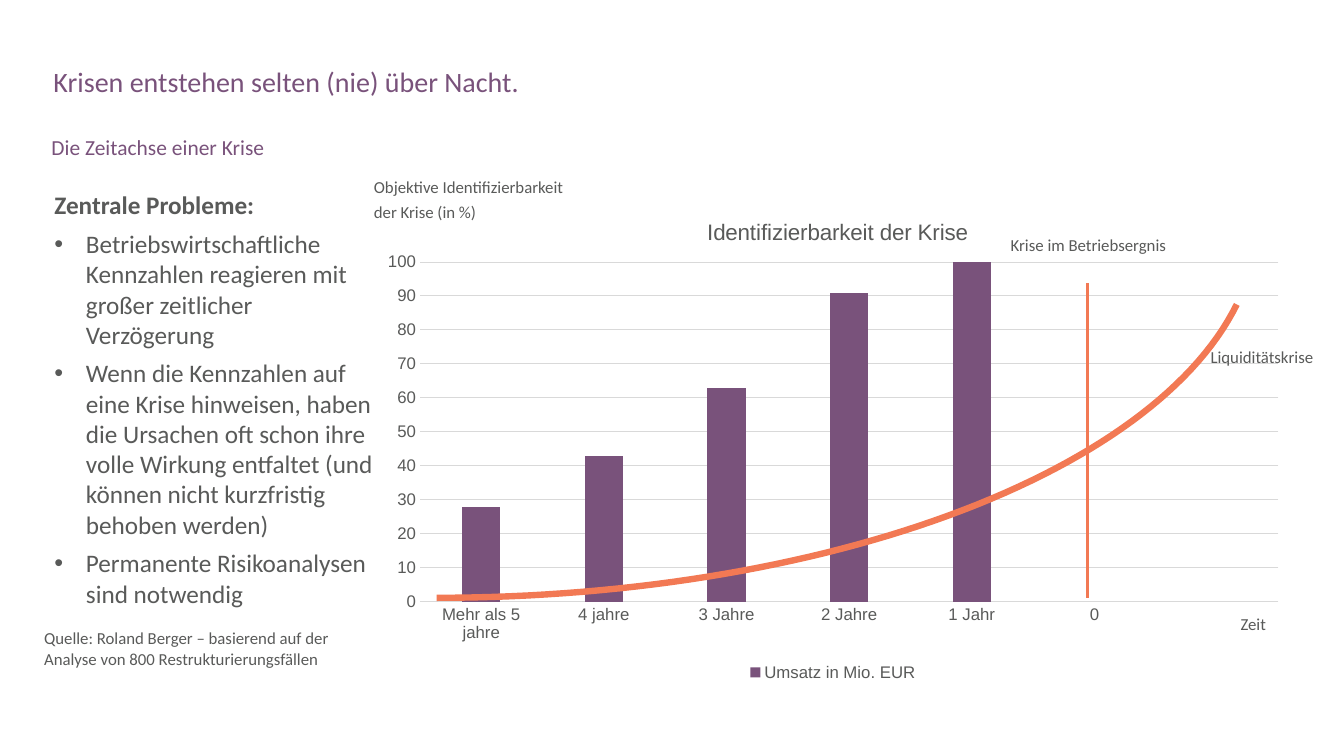
import math

from lxml import etree
from pptx import Presentation, util as u
from pptx.chart.data import CategoryChartData
from pptx.dml.color import RGBColor
from pptx.enum import chart as ch, shapes, text
from pptx.oxml import ns

Pt = u.Pt
COLORS = {"plum": "79527B", "gray": "595A59", "orange": "F27954", "grid": "D9D9D9"}
ALIGN = text.PP_ALIGN


def color(name):
    return RGBColor.from_string(COLORS[name])


def sub(parent, tag, **attributes):
    return etree.SubElement(parent, ns.qn(tag), **attributes)


def place(shape, left, top, width, height):
    shape.left, shape.top, shape.width, shape.height = map(Pt, (left, top, width, height))


def set_bullet(paragraph, bullet):
    properties = paragraph._p.get_or_add_pPr()
    indent = Pt(22.5) if bullet else 0
    properties.set("marL", str(indent))
    properties.set("indent", str(-indent))
    if bullet:
        sub(sub(properties, "a:buClr"), "a:srgbClr", val=COLORS["gray"])
        sub(properties, "a:buFont", typeface="Arial")
        sub(properties, "a:buChar", char="•")
    else:
        sub(properties, "a:buNone")


def write(shape, lines, size=12, tint="gray", align=ALIGN.LEFT, spacing=1.0,
          anchor=text.MSO_ANCHOR.TOP, inset=(6.5, 3), heading=False):
    frame = shape.text_frame
    frame.word_wrap = True
    frame.auto_size = text.MSO_AUTO_SIZE.NONE
    frame.vertical_anchor = anchor
    frame.margin_left = frame.margin_right = Pt(inset[0])
    frame.margin_top = frame.margin_bottom = Pt(inset[1])
    for index, line in enumerate(lines):
        paragraph = frame.add_paragraph() if index else frame.paragraphs[0]
        paragraph.text = line
        paragraph.alignment = align
        paragraph.line_spacing = spacing
        paragraph.space_before = Pt(6 if heading and index else 0)
        paragraph.space_after = Pt(0)
        set_bullet(paragraph, heading and index > 0)
        font = paragraph.font
        font.size, font.name = Pt(size), "Calibri"
        font.bold = heading and index == 0
        font.color.rgb = color(tint)


def add_label(slide, box, lines, **style):
    write(slide.shapes.add_textbox(*map(Pt, box)), lines, **style)


def set_font(font, size):
    font.size, font.name, font.bold = Pt(size), "Arial", False
    font.color.rgb = color("gray")


def set_layout(parent, position, **measures):
    for old in parent.findall(ns.qn("c:layout")):
        parent.remove(old)
    layout = etree.Element(ns.qn("c:layout"))
    manual = sub(layout, "c:manualLayout")
    if "w" in measures:
        sub(manual, "c:layoutTarget", val="inner")
    for edge in ("xMode", "yMode"):
        sub(manual, f"c:{edge}", val="edge")
    for name, value in measures.items():
        sub(manual, f"c:{name}", val=str(value))
    parent.insert(position, layout)


def add_crisis_chart(slide):
    data = CategoryChartData()
    data.categories = ["Mehr als 5 jahre", "4 jahre", "3 Jahre", "2 Jahre", "1 Jahr", "0", ""]
    data.add_series("Umsatz in Mio. EUR", (28, 43, 63, 91, 100, None, None))
    chart = slide.shapes.add_chart(ch.XL_CHART_TYPE.COLUMN_CLUSTERED, Pt(263.5), Pt(139),
                                   Pt(663), Pt(350.6), data).chart
    set_font(chart.font, 12)
    title = chart.chart_title
    title.text_frame.text = "Identifizierbarkeit der Krise"
    set_font(title.text_frame.paragraphs[0].font, 16)
    title.include_in_layout = False
    set_layout(title._element, 1, x=0.36, y=0.04)
    set_layout(chart._chartSpace.chart.plotArea, 0, x=0.055, y=0.1375, w=0.925, h=0.692)

    chart.has_legend = True
    chart.legend.position = ch.XL_LEGEND_POSITION.BOTTOM
    chart.legend.include_in_layout = False
    set_font(chart.legend.font, 12)

    bars = chart.plots[0]
    bars.gap_width, bars.overlap, bars.vary_by_categories = 219, -27, False
    fill = bars.series[0].format.fill
    fill.solid()
    fill.fore_color.rgb = color("plum")

    years, percent = chart.category_axis, chart.value_axis
    for axis in (years, percent):
        axis.major_tick_mark = axis.minor_tick_mark = ch.XL_TICK_MARK.NONE
        set_font(axis.tick_labels.font, 12)
    percent.minimum_scale, percent.maximum_scale, percent.major_unit = 0, 100, 10
    percent.format.line.fill.background()
    percent.has_major_gridlines = True
    for line in (years.format.line, percent.major_gridlines.format.line):
        line.color.rgb = color("grid")
        line.width = Pt(0.75)


def set_line(shape, width):
    shape.line.color.rgb = color("orange")
    shape.line.width = Pt(width)


def add_liquidity_curve(slide):
    left, bottom, radius_x, radius_y, sweep, steps = 311.8, 427, 586, 268.8, 77.27, 60
    angles = [math.radians(sweep * step / steps) for step in range(1, steps + 1)]
    points = [(Pt(left + radius_x * math.sin(angle)),
               Pt(bottom - radius_y * (1 - math.cos(angle)))) for angle in angles]
    builder = slide.shapes.build_freeform(Pt(left), Pt(bottom))
    builder.add_line_segments(points, close=False)
    curve = builder.convert_to_shape()
    curve.fill.background()
    curve.shadow.inherit = False
    set_line(curve, 4.56)


def add_crisis_marker(slide):
    marker = slide.shapes.add_connector(shapes.MSO_CONNECTOR.STRAIGHT,
                                        Pt(777), Pt(427), Pt(777), Pt(202.5))
    set_line(marker, 2)
    sub(marker._element.spPr, "a:effectLst")


def main():
    deck = Presentation()
    deck.slide_width, deck.slide_height = Pt(960), Pt(540)
    slide = deck.slides.add_slide(deck.slide_layouts[3])
    headline, problems, subtitle = slide.placeholders
    wide = (7.2, 3.6)

    place(headline, 31, 45.5, 903, 46)
    write(headline, ["Krisen entstehen selten (nie) über Nacht."], size=20, tint="plum",
          spacing=0.9, inset=wide)
    place(subtitle, 29.5, 97.2, 904, 20)
    write(subtitle, ["Die Zeitachse einer Krise"], size=15.3, tint="plum",
          spacing=0.7, inset=wide)
    place(problems, 31.7, 117.4, 251.3, 335)
    write(problems, [
        "Zentrale Probleme:",
        "Betriebswirtschaftliche Kennzahlen reagieren mit großer zeitlicher Verzögerung",
        "Wenn die Kennzahlen auf eine Krise hinweisen, haben die Ursachen oft schon ihre "
        "volle Wirkung entfaltet (und können nicht kurzfristig behoben werden)",
        "Permanente Risikoanalysen sind notwendig",
    ], size=18, anchor=text.MSO_ANCHOR.MIDDLE, inset=wide, heading=True)

    add_crisis_chart(slide)
    add_label(slide, (25, 445.7, 238.3, 35.3),
              ["Quelle: Roland Berger – basierend auf der Analyse von 800 Restrukturierungsfällen"])
    add_liquidity_curve(slide)
    add_crisis_marker(slide)
    add_label(slide, (678.2, 161.3, 198.7, 24.5), ["Krise im Betriebsergnis"],
              align=ALIGN.CENTER, spacing=1.25)
    add_label(slide, (746, 241.2, 198.7, 24.5), ["Liquiditätskrise"],
              align=ALIGN.RIGHT, spacing=1.25)
    add_label(slide, (260.6, 119.5, 198.7, 62.6),
              ["Objektive Identifizierbarkeit", "der Krise (in %)"], spacing=1.25)
    add_label(slide, (871.2, 432, 39.6, 24.5), ["Zeit"], align=ALIGN.RIGHT, spacing=1.25)
    deck.save("out.pptx")


if __name__ == "__main__":
    main()
